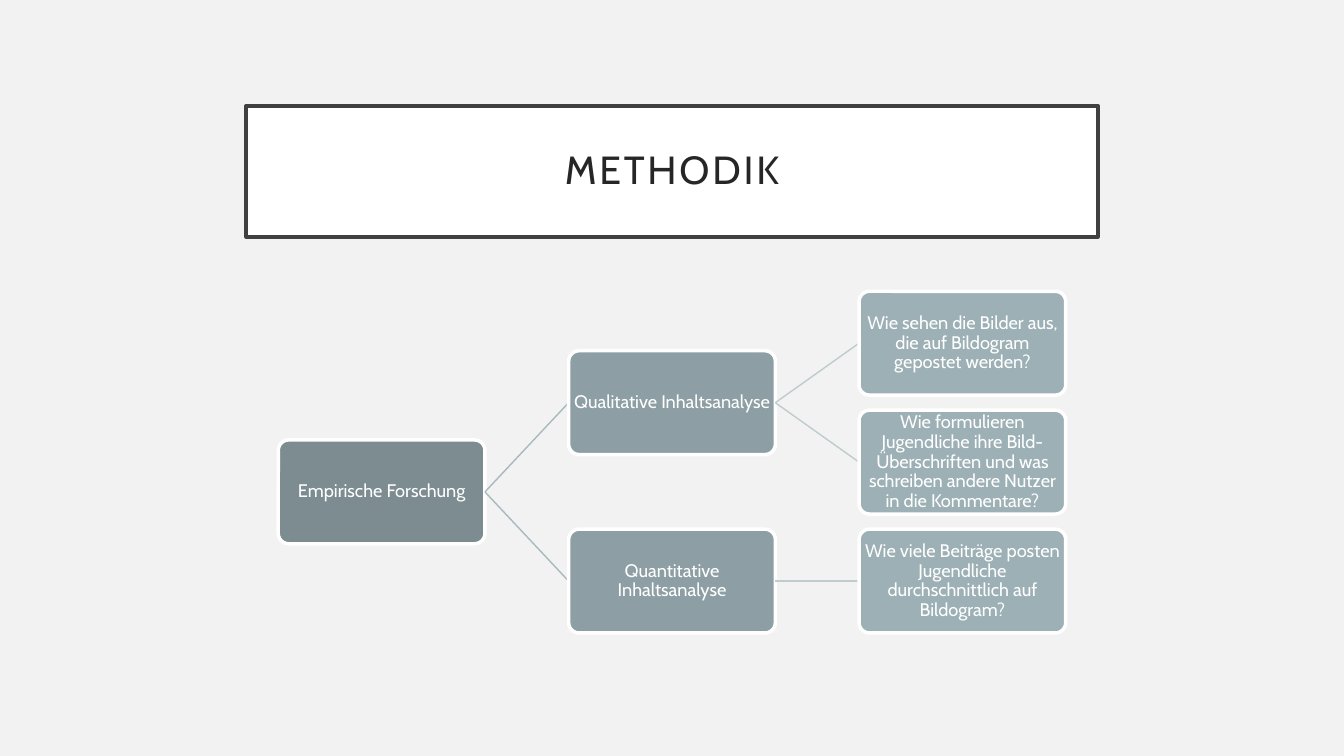
"""Build the slide "Methodik" with its tree of research methods."""
import pptx
import pptx.dml.color
import pptx.enum.shapes
import pptx.enum.text
import pptx.oxml.ns
import pptx.util
from pptx.util import Inches, Pt

TITLE = "METHODIK"
TREE = ("Empirische Forschung", [
    ("Qualitative Inhaltsanalyse", [
        ("Wie sehen die Bilder aus, die auf Bildogram gepostet werden?", []),
        ("Wie formulieren Jugendliche ihre Bild-Überschriften und was "
         "schreiben andere Nutzer in die Kommentare?", []),
    ]),
    ("Quantitative Inhaltsanalyse", [
        ("Wie viele Beiträge posten Jugendliche durchschnittlich auf Bildogram?", []),
    ]),
])
COLORS = {
    "background": "F2F2F2", "white": "FFFFFF", "frame": "404040", "title": "262626",
    "level0": "7C8C91", "level1": "8D9FA4", "level2": "9CB0B6",
    "branch1": "A9B9BE", "branch2": "C0CBCF",
}
FONT = "Cabin"
TREE_LEFT, TREE_TOP = 2.76, 2.89
BOX_WIDTH, BOX_HEIGHT = 2.05, 1.03
COLUMN_STEP, ROW_STEP = 2.88, 1.18
LEFT_SIDE, RIGHT_SIDE = 1, 3


def color(name):
    return pptx.dml.color.RGBColor.from_string(COLORS[name])


def add_box(slide, preset, place, fill, line, text, size, text_color, margin):
    box = slide.shapes.add_shape(preset, *[Inches(length) for length in place])
    box.shadow.inherit = False
    box.fill.solid()
    box.fill.fore_color.rgb = color(fill)
    box.line.color.rgb = color(line)
    box.line.width = Pt(2.5)
    frame = box.text_frame
    frame.word_wrap = True
    frame.vertical_anchor = pptx.enum.text.MSO_ANCHOR.MIDDLE
    frame.margin_left = frame.margin_right = Inches(margin)
    frame.margin_top = frame.margin_bottom = Inches(margin)
    paragraph = frame.paragraphs[0]
    paragraph.text = text
    paragraph.alignment = pptx.enum.text.PP_ALIGN.CENTER
    paragraph.line_spacing = 0.9
    paragraph.font.name = FONT
    paragraph.font.size = Pt(size)
    paragraph.font.color.rgb = color(text_color)
    return box


def add_branch(slide, parent, level):
    branch = slide.shapes.add_connector(pptx.enum.shapes.MSO_CONNECTOR.STRAIGHT, 0, 0, 0, 0)
    branch.begin_connect(parent, RIGHT_SIDE)
    branch.line.color.rgb = color(f"branch{level}")
    branch.line.width = Pt(1)
    properties = branch._element.spPr
    properties.append(properties.makeelement(pptx.oxml.ns.qn("a:effectLst"), {}))
    return branch


def lay_out(node, first_row=0):
    text, children = node
    placed, next_row = [], first_row
    for child in children:
        placed_child, next_row = lay_out(child, next_row)
        placed.append(placed_child)
    if not placed:
        return (text, first_row, placed), first_row + 1
    middle = (placed[0][1] + placed[-1][1]) / 2
    return (text, middle, placed), next_row


def draw_tree(slide, node, level=0, parent=None):
    text, row, children = node
    branch = add_branch(slide, parent, level) if parent else None
    place = (TREE_LEFT + level * COLUMN_STEP, TREE_TOP + row * ROW_STEP, BOX_WIDTH, BOX_HEIGHT)
    box = add_box(slide, pptx.enum.shapes.MSO_SHAPE.ROUNDED_RECTANGLE, place,
                  f"level{level}", "white", text, 13, "white", 0.01)
    box.adjustments[0] = 0.1
    if branch:
        branch.end_connect(box, LEFT_SIDE)
    for child in children:
        draw_tree(slide, child, level + 1, box)


def main():
    deck = pptx.Presentation()
    deck.slide_width, deck.slide_height = Inches(13.33), Inches(7.5)
    slide = deck.slides.add_slide(deck.slide_layouts[6])
    slide.background.fill.solid()
    slide.background.fill.fore_color.rgb = color("background")
    title = add_box(slide, pptx.enum.shapes.MSO_SHAPE.RECTANGLE, (2.44, 1.05, 8.45, 1.3),
                    "white", "frame", TITLE, 28, "title", 0.2)
    title.text_frame.paragraphs[0].runs[0]._r.get_or_add_rPr().set("spc", "200")
    tree, _ = lay_out(TREE)
    draw_tree(slide, tree)
    deck.save("out.pptx")


if __name__ == "__main__":
    main()
